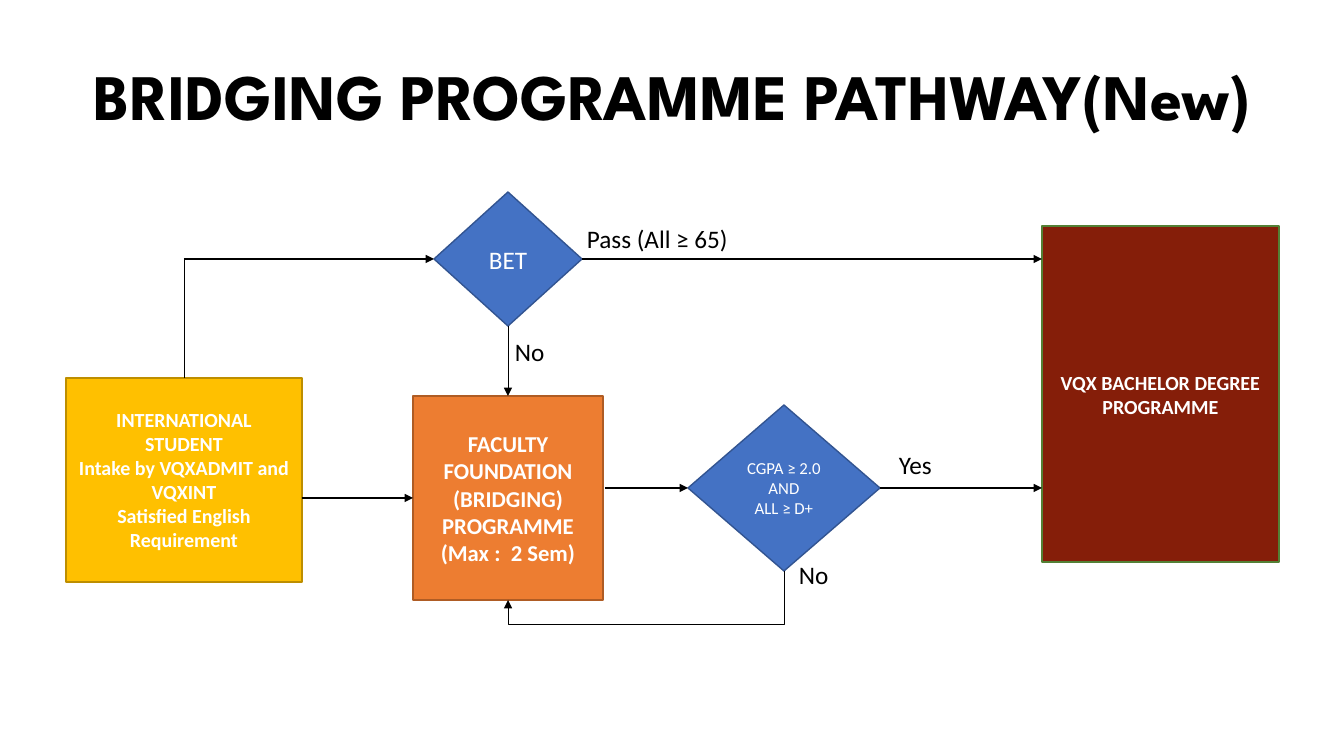
"""Builds the bridging programme pathway flowchart slide."""
import pptx
import pptx.dml.color
import pptx.enum.shapes
import pptx.enum.text
import pptx.oxml
import pptx.oxml.ns
import pptx.util
from lxml import etree

SHAPE = pptx.enum.shapes.MSO_SHAPE
CONNECTOR = pptx.enum.shapes.MSO_CONNECTOR
ANCHOR = pptx.enum.text.MSO_ANCHOR
ALIGN = pptx.enum.text.PP_ALIGN
TOP, LEFT, BOTTOM, RIGHT = range(4)

COLOURS = {
    "black": "000000", "white": "FFFFFF",
    "yellow": "FFC000", "yellow edge": "BD8E00",
    "orange": "ED7D31", "orange edge": "AF5C24",
    "maroon": "851E09", "green edge": "538035",
    "blue": "4472C4", "blue edge": "325491",
}

TITLE = ("BRIDGING PROGRAMME PATHWAY(New)", (83, 45, 1208, 110))

STEPS = {
    "student": (SHAPE.RECTANGLE, (66, 378, 236, 204), "yellow", "yellow edge", 14.3, True,
                ["INTERNATIONAL STUDENT", "Intake by VQXADMIT and VQXINT",
                 "Satisfied English Requirement"]),
    "faculty": (SHAPE.RECTANGLE, (413, 396, 190, 204), "orange", "orange edge", 16.2, True,
                ["FACULTY FOUNDATION (BRIDGING) PROGRAMME", "(Max :  2 Sem)"]),
    "degree": (SHAPE.RECTANGLE, (1042, 226, 237, 336), "maroon", "green edge", 14.3, True,
               ["VQX BACHELOR DEGREE PROGRAMME"]),
    "bet": (SHAPE.DIAMOND, (434, 192, 148, 134), "blue", "blue edge", 18, False, ["BET"]),
    "cgpa": (SHAPE.DIAMOND, (688, 405, 192, 166), "blue", "blue edge", 12, False,
             ["CGPA ≥ 2.0", "AND", "ALL ≥ D+"]),
}

ROUTES = [
    ((302, 498), ("faculty", LEFT), 1.25, True),
    ((605, 488), ("cgpa", LEFT), 1.25, True),
    ((184, 259), ("bet", LEFT), 1, True),
    (("bet", RIGHT), (1042, 259), 1, True),
    (("student", TOP), (184, 259), 0.5, False),
    (("cgpa", RIGHT), (1042, 488), 1.25, True),
    (("bet", BOTTOM), ("faculty", TOP), 0.5, True),
]
RETRY_DEPTH = 53

ANSWERS = [
    ("Pass (All ≥ 65)", (576, 218)),
    ("No", (504, 331)),
    ("Yes", (888, 444)),
    ("No", (788, 554)),
]
ANSWER_SIZE = (180, 40)


def emu(px):
    return pptx.util.Emu(round(px * 914400 / 100.8))


def rgb(name):
    return pptx.dml.color.RGBColor.from_string(COLOURS[name])


def write(frame, lines, size, colour, bold=False, font="Calibri",
          align=ALIGN.CENTER, anchor=ANCHOR.MIDDLE, spacing=1.0):
    frame_format = {"word_wrap": True, "vertical_anchor": anchor,
                    "margin_left": emu(11), "margin_right": emu(11),
                    "margin_top": emu(5), "margin_bottom": emu(5)}
    for attribute, value in frame_format.items():
        setattr(frame, attribute, value)
    for index, line in enumerate(lines):
        paragraph = frame.paragraphs[0] if index == 0 else frame.add_paragraph()
        paragraph.alignment, paragraph.line_spacing = align, spacing
        run = paragraph.add_run()
        run.text = line
        for attribute, value in {"name": font, "size": pptx.util.Pt(size), "bold": bold}.items():
            setattr(run.font, attribute, value)
        run.font.color.rgb = rgb(colour)


def side_point(step, side):
    left, top, width, height = STEPS[step][1]
    return {TOP: (left + width / 2, top), LEFT: (left, top + height / 2),
            BOTTOM: (left + width / 2, top + height),
            RIGHT: (left + width, top + height / 2)}[side]


def add_route(slide, kind, start, end, weight, arrow):
    route = slide.shapes.add_connector(kind, *map(emu, start + end))
    route.line.color.rgb = rgb("black")
    route.line.width = pptx.util.Pt(weight)
    if arrow:
        etree.SubElement(route.line._get_or_add_ln(), pptx.oxml.ns.qn("a:tailEnd"), type="triangle")
    etree.SubElement(route._element.spPr, pptx.oxml.ns.qn("a:effectLst"))
    return route


def add_retry_loop(slide):
    start, end = side_point("cgpa", BOTTOM), side_point("faculty", BOTTOM)
    drop, reach = end[1] - start[1], start[0] - end[0]
    loop = add_route(slide, CONNECTOR.ELBOW, start, end, 0.5, True)
    frame = loop._element.spPr.find(pptx.oxml.ns.qn("a:xfrm"))
    frame.attrib.pop("flipH", None)
    frame.set("rot", str(90 * 60000))
    loop.left = emu((start[0] + end[0] - drop) / 2)
    loop.top = emu((start[1] + end[1] - reach) / 2)
    loop.width, loop.height = emu(drop), emu(reach)
    geometry = loop._element.spPr.find(pptx.oxml.ns.qn("a:prstGeom"))
    guides = geometry.find(pptx.oxml.ns.qn("a:avLst"))
    etree.SubElement(guides, pptx.oxml.ns.qn("a:gd"), name="adj1",
                     fmla=f"val {round(RETRY_DEPTH / drop * 100000)}")


def main():
    deck = pptx.Presentation()
    deck.slide_width, deck.slide_height = emu(1344), emu(756)
    slide = deck.slides.add_slide(deck.slide_layouts[6])

    heading, place = TITLE
    title = slide.shapes.add_textbox(*map(emu, place))
    write(title.text_frame, [heading], 46.3, "black", True, "League Spartan",
          align=ALIGN.LEFT, spacing=0.9)

    boxes = {}
    for step, (outline, place, fill, edge, size, bold, lines) in STEPS.items():
        box = boxes[step] = slide.shapes.add_shape(outline, *map(emu, place))
        box.shadow.inherit = False
        box.fill.solid()
        box.fill.fore_color.rgb = rgb(fill)
        box.line.color.rgb = rgb(edge)
        box.line.width = pptx.util.Pt(1)
        write(box.text_frame, lines, size, "white", bold)

    for start, end, weight, arrow in ROUTES:
        ends = [side_point(*spot) if spot[0] in STEPS else spot for spot in (start, end)]
        route = add_route(slide, CONNECTOR.STRAIGHT, *ends, weight, arrow)
        for spot, join in ((start, route.begin_connect), (end, route.end_connect)):
            if spot[0] in STEPS:
                join(boxes[spot[0]], spot[1])
    add_retry_loop(slide)

    for answer, place in ANSWERS:
        label = slide.shapes.add_textbox(*map(emu, place + ANSWER_SIZE))
        write(label.text_frame, [answer], 18, "black", align=ALIGN.LEFT, anchor=ANCHOR.TOP)

    deck.save("out.pptx")


if __name__ == "__main__":
    main()
